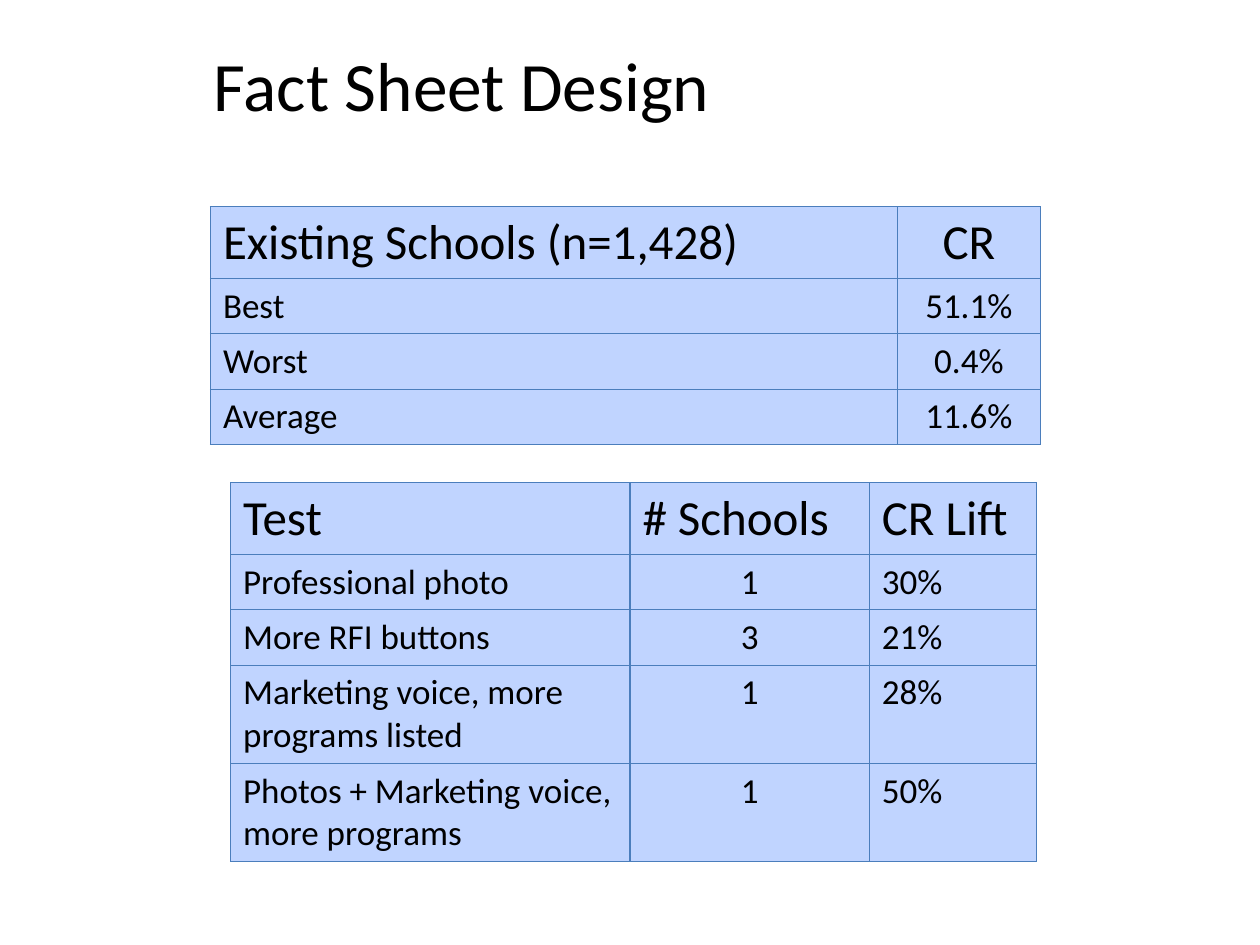
from dataclasses import dataclass

from lxml import etree
from pptx import Presentation
from pptx.dml.color import RGBColor
from pptx.enum.text import MSO_ANCHOR, PP_ALIGN
from pptx.oxml.ns import qn
from pptx.util import Inches, Pt

LEFT, CENTER = PP_ALIGN.LEFT, PP_ALIGN.CENTER
MIDDLE, TOP = MSO_ANCHOR.MIDDLE, MSO_ANCHOR.TOP


@dataclass(frozen=True)
class Theme:
    font: str = "Calibri"
    text: str = "000000"
    cell: str = "C0D4FF"
    border: str = "4B7EBC"
    border_width: float = 0.75
    title_size: float = 39.6
    header_size: float = 28
    body_size: float = 20


THEME = Theme()

# Row heights by kind of row
HEADER, SINGLE, DOUBLE = 0.57, 0.44, 0.78

SCHOOLS = [
    ("Existing Schools (n=1,428)", "CR"),
    ("Best", "51.1%"),
    ("Worst", "0.4%"),
    ("Average", "11.6%"),
]
TESTS = [
    ("Test", "# Schools", "CR Lift"),
    ("Professional photo", "1", "30%"),
    ("More RFI buttons", "3", "21%"),
    ("Marketing voice, more programs listed", "1", "28%"),
    ("Photos + Marketing voice, more programs", "1", "50%"),
]


def write_text(tf, text, size, align=LEFT):
    p = tf.paragraphs[0]
    p.alignment = align
    r = p.add_run()
    r.text = text
    r.font.name = THEME.font
    r.font.size = Pt(size)
    r.font.color.rgb = RGBColor.from_string(THEME.text)


def style_cell(cell):
    # Borders come before the fill in the cell properties
    tc_pr = cell._tc.get_or_add_tcPr()
    for side in ("a:lnL", "a:lnR", "a:lnT", "a:lnB"):
        ln = etree.SubElement(tc_pr, qn(side), w=str(Pt(THEME.border_width)))
        fill = etree.SubElement(ln, qn("a:solidFill"))
        etree.SubElement(fill, qn("a:srgbClr"), val=THEME.border)
    cell.fill.solid()
    cell.fill.fore_color.rgb = RGBColor.from_string(THEME.cell)
    cell.vertical_anchor = TOP


def add_title(slide, text, x, y, w, h):
    sp = slide.shapes.add_textbox(Inches(x), Inches(y), Inches(w), Inches(h))
    tf = sp.text_frame
    tf.word_wrap = True
    tf.vertical_anchor = MIDDLE
    write_text(tf, text, THEME.title_size, CENTER)


def add_data_table(slide, rows, x, y, widths, heights, header_aligns, body_aligns):
    frame = slide.shapes.add_table(
        len(rows), len(widths), Inches(x), Inches(y),
        Inches(sum(widths)), Inches(sum(heights)))
    table = frame.table
    table.horz_banding = False
    for column, width in zip(table.columns, widths):
        column.width = Inches(width)
    for i, (values, height) in enumerate(zip(rows, heights)):
        table.rows[i].height = Inches(height)
        size = THEME.body_size if i else THEME.header_size
        aligns = body_aligns if i else header_aligns
        for j, (value, align) in enumerate(zip(values, aligns)):
            cell = table.cell(i, j)
            style_cell(cell)
            write_text(cell.text_frame, value, size, align)


def main():
    prs = Presentation()
    prs.slide_width, prs.slide_height = Inches(10), Inches(7.5)
    slide = prs.slides.add_slide(prs.slide_layouts[6])

    add_title(slide, "Fact Sheet Design", 0.33, 0.33, 6.67, 0.67)

    # Conversion rates of existing schools
    add_data_table(slide, SCHOOLS, 1.67, 1.64, (5.45, 1.14),
                   (HEADER, SINGLE, SINGLE, SINGLE),
                   (LEFT, CENTER), (LEFT, CENTER))

    # Lift measured in each test
    add_data_table(slide, TESTS, 1.83, 3.83, (3.17, 1.9, 1.33),
                   (HEADER, SINGLE, SINGLE, DOUBLE, DOUBLE),
                   (LEFT, LEFT, LEFT), (LEFT, CENTER, LEFT))

    prs.save("out.pptx")


if __name__ == "__main__":
    main()
